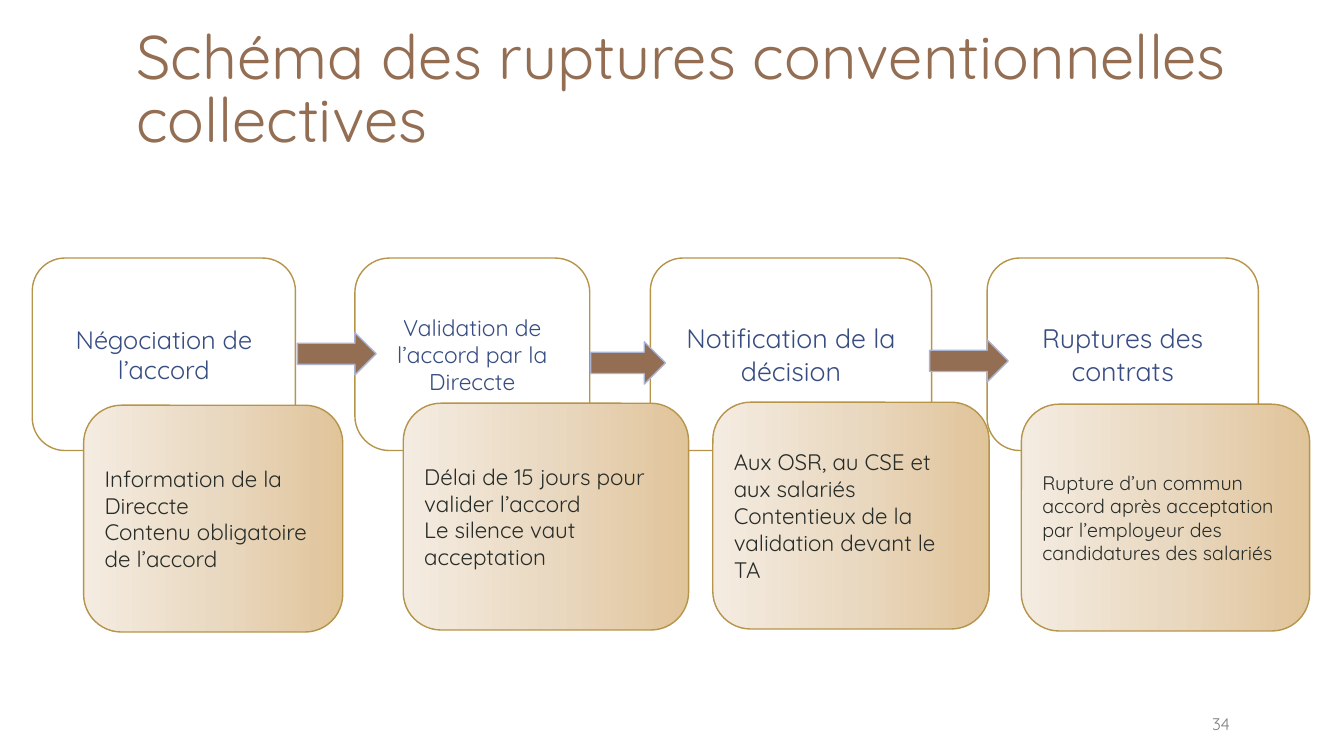
from copy import deepcopy

from pptx import Presentation
from pptx.dml.color import RGBColor
from pptx.enum.shapes import MSO_SHAPE
from pptx.enum.text import MSO_ANCHOR, MSO_AUTO_SIZE, PP_ALIGN
from pptx.util import Emu, Pt

PX = 9144  # 100 px to the inch
FONT = "Quicksand"
COLORS = {
    "brown": "936E53",
    "gold": "B6944A",
    "blue": "374C81",
    "pale_blue": "ABB4D1",
    "ink": "272C28",
    "grey": "808080",
}
CARD_GRADIENT = ((0, "E0C49A"), (0.5, "EAD9C2"), (1, "F4ECE1"))

STEP_TOP, STEP_HEIGHT = 256, 191
CARD_HEIGHT = 225
ARROW_HEIGHT = 42

# left, width, text size, corner ratio, text
STEPS = (
    (32, 261, 18.1, 0.17, "Négociation de l’accord"),
    (352, 233, 16.3, 0.18, "Validation de l’accord par la Direccte"),
    (645, 279, 19.1, 0.17, "Notification de la décision"),
    (979, 269, 19.1, 0.17, "Ruptures des contrats"),
)
# left, top, width, text size, lines
CARDS = (
    (83, 402, 257, 16, ("Information de la Direccte",
                        "Contenu obligatoire de l’accord")),
    (400, 400, 283, 16, ("Délai de 15 jours pour valider l’accord",
                         "Le silence vaut acceptation")),
    (707, 399, 274, 16, ("Aux OSR, au CSE et aux salariés",
                         "Contentieux de la validation devant le TA")),
    (1013, 401, 286, 14, ("Rupture d’un commun accord après acceptation par "
                          "l’employeur des candidatures des salariés",)),
)
# left, top, width
ARROWS = ((295, 330, 78), (586, 339, 74), (922, 337, 78))


def px(*lengths):
    return [Emu(length * PX) for length in lengths]


def rgb(name):
    return RGBColor.from_string(COLORS[name])


def write(shape, text, size, color, align, anchor=MSO_ANCHOR.MIDDLE):
    frame = shape.text_frame
    frame.text = text
    frame.word_wrap = True
    frame.vertical_anchor = anchor
    for paragraph in frame.paragraphs:
        paragraph.alignment = align
        for run in paragraph.runs:
            run.font.name = FONT
            run.font.size = Pt(size)
            run.font.color.rgb = rgb(color)


def set_wide_margins(frame):
    frame.margin_left, frame.margin_right = px(13, 13)
    frame.margin_top, frame.margin_bottom = px(7, 7)


def add_outlined_shape(slide, kind, box, line_color):
    shape = slide.shapes.add_shape(kind, *px(*box))
    shape.shadow.inherit = False
    shape.line.color.rgb = rgb(line_color)
    shape.line.width = Pt(1)
    return shape


def fill_with_gradient(shape, stops, angle):
    """Fill the shape with three colour stops, given as (position, hex)."""
    fill = shape.fill
    fill.gradient()
    fill.gradient_angle = angle
    stop_list = fill._fill._gradFill.gsLst
    stop_list.append(deepcopy(stop_list[-1]))
    for stop, (position, color) in zip(fill.gradient_stops, stops):
        stop.position = position
        stop.color.rgb = RGBColor.from_string(color)


def add_title(slide, text):
    title = slide.shapes.title
    title.left, title.top, title.width, title.height = px(122, 8, 1111, 153)
    write(title, text, 44, "brown", PP_ALIGN.LEFT, MSO_ANCHOR.BOTTOM)
    title.text_frame.auto_size = MSO_AUTO_SIZE.NONE
    title.text_frame.paragraphs[0].line_spacing = 0.85
    set_wide_margins(title.text_frame)


def add_step(slide, left, width, size, corner, text):
    step = add_outlined_shape(slide, MSO_SHAPE.ROUNDED_RECTANGLE,
                              (left, STEP_TOP, width, STEP_HEIGHT), "gold")
    step.adjustments[0] = corner
    step.fill.background()
    write(step, text, size, "blue", PP_ALIGN.CENTER)


def add_card(slide, left, top, width, size, lines):
    card = add_outlined_shape(slide, MSO_SHAPE.ROUNDED_RECTANGLE,
                              (left, top, width, CARD_HEIGHT), "gold")
    fill_with_gradient(card, CARD_GRADIENT, 180)
    write(card, "\n".join(lines), size, "ink", PP_ALIGN.LEFT)


def add_arrow(slide, left, top, width):
    arrow = add_outlined_shape(slide, MSO_SHAPE.RIGHT_ARROW,
                               (left, top, width, ARROW_HEIGHT), "pale_blue")
    arrow.fill.solid()
    arrow.fill.fore_color.rgb = rgb("brown")


def add_page_number(slide, number):
    box = slide.shapes.add_textbox(*px(1112, 700, 121, 35))
    write(box, number, 12, "grey", PP_ALIGN.RIGHT, MSO_ANCHOR.BOTTOM)
    set_wide_margins(box.text_frame)


def main():
    presentation = Presentation()
    presentation.slide_width, presentation.slide_height = px(1333, 750)
    slide = presentation.slides.add_slide(presentation.slide_layouts[5])
    add_title(slide, "Schéma des ruptures conventionnelles collectives")
    for step in STEPS:
        add_step(slide, *step)
    for card in CARDS:
        add_card(slide, *card)
    for arrow in ARROWS:
        add_arrow(slide, *arrow)
    add_page_number(slide, "34")
    presentation.save("out.pptx")


if __name__ == "__main__":
    main()
